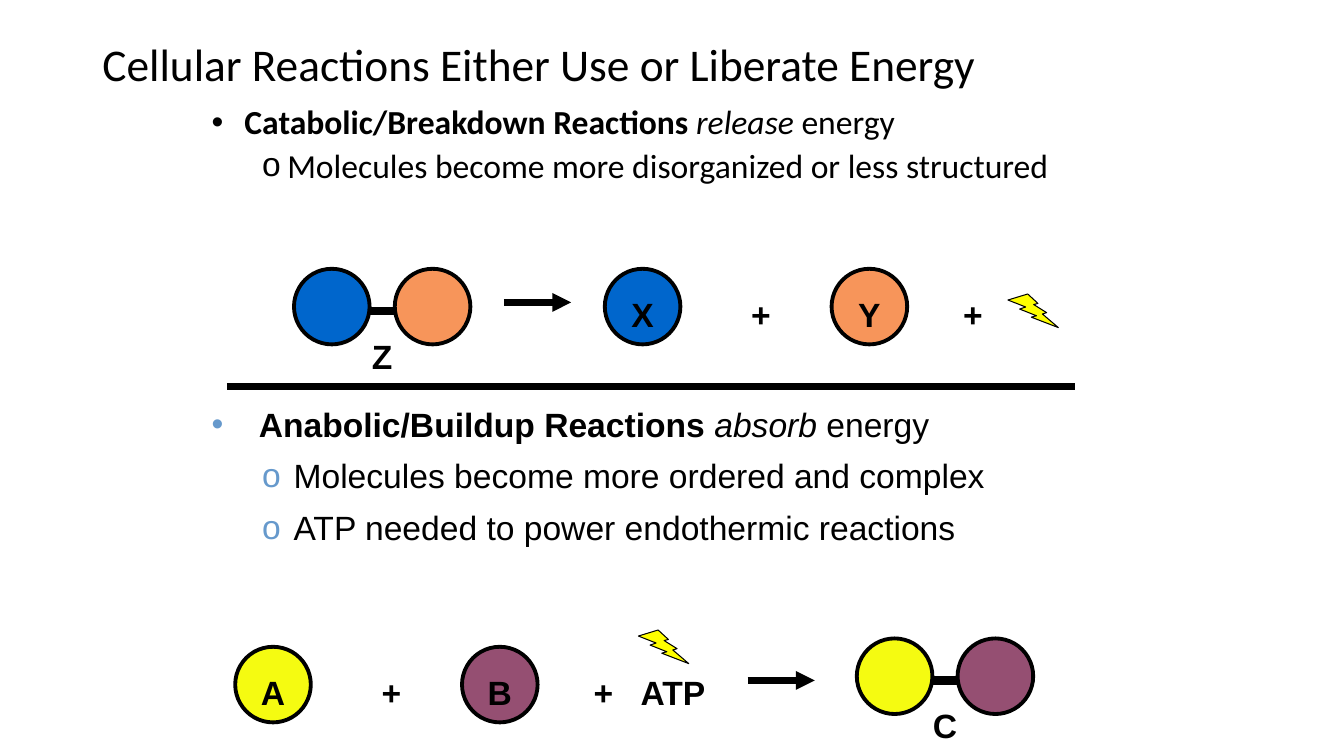
from dataclasses import dataclass
from typing import Optional

from lxml.etree import SubElement
from pptx import Presentation
from pptx.dml.color import RGBColor
from pptx.enum.shapes import MSO_CONNECTOR, MSO_SHAPE
from pptx.enum.text import MSO_ANCHOR, MSO_AUTO_SIZE, PP_ALIGN
from pptx.oxml.ns import qn
from pptx.util import Pt

BLACK = RGBColor(0x00, 0x00, 0x00)
BLUE = RGBColor(0x00, 0x66, 0xCC)
ORANGE = RGBColor(0xF7, 0x95, 0x5A)
LEMON = RGBColor(0xF5, 0xFB, 0x11)
PLUM = RGBColor(0x95, 0x4F, 0x72)
YELLOW = RGBColor(0xFF, 0xFF, 0x00)
BULLET_BLUE = RGBColor(0x66, 0x99, 0xCC)

BALL = 54
BOND = 18
TEXT_SIZE = 24


@dataclass
class Run:
    text: str
    bold: bool = False
    italic: bool = False


@dataclass
class Item:
    runs: list[Run]
    level: int
    margin: float
    hanging: float
    before: float


@dataclass
class BulletList:
    items: list[Item]
    top: float
    height: float
    font: str
    bullet_color: RGBColor


@dataclass
class Ball:
    left: float
    top: float
    color: RGBColor
    label: str = ""


@dataclass
class Molecule:
    left: float
    top: float
    colors: tuple[RGBColor, RGBColor]
    label: str


@dataclass
class Label:
    text: str
    x: float
    y: float


@dataclass
class Line:
    x1: float
    x2: float
    y: float
    width: float = 4.5
    arrow: bool = False


LISTS = [
    BulletList([
        Item([Run("Catabolic/Breakdown Reactions ", bold=True),
              Run("release", italic=True), Run(" energy")], 0, 23.4, 23.4, 10),
        Item([Run("Molecules become more disorganized or less structured")],
             1, 54, 18, 5),
    ], 72, 96, "Calibri", BLACK),
    BulletList([
        Item([Run("Anabolic/Buildup Reactions ", bold=True),
              Run("absorb ", italic=True), Run("energy")], 0, 33.7, 33.7, 11),
        Item([Run("Molecules become more ordered and complex")],
             1, 58.5, 22.5, 11),
        Item([Run("ATP needed to power endothermic reactions")],
             1, 58.5, 22.5, 11),
    ], 288, 109, "Arial", BULLET_BLUE),
]
MOLECULES = [
    Molecule(210, 192, (BLUE, ORANGE), "Z"),
    Molecule(612, 456, (LEMON, PLUM), "C"),
]
BALLS = [
    Ball(432, 192, BLUE, "X"),
    Ball(594, 192, ORANGE, "Y"),
    Ball(168, 462, LEMON, "A"),
    Ball(330, 462, PLUM, "B"),
]
LABELS = [
    Label("+", 543.5, 224.3),
    Label("+", 695, 224.3),
    Label("+", 279.5, 494.3),
    Label("+", 431, 494.3),
    Label("ATP", 480.7, 494.3),
]
LINES = [
    Line(360, 408, 216, arrow=True),
    Line(534, 582, 486, arrow=True),
    Line(162, 768, 276),
]
BOLTS = [(720, 210), (456, 450)]


def add_run(p, run: Run, font: str, size: float = TEXT_SIZE) -> None:
    r = p.add_run()
    r.text = run.text
    r.font.name = font
    r.font.size = Pt(size)
    r.font.bold = run.bold
    r.font.italic = run.italic
    r.font.color.rgb = BLACK


def place(sp, left: float, top: float, width: float, height: float) -> None:
    sp.left, sp.top = Pt(left), Pt(top)
    sp.width, sp.height = Pt(width), Pt(height)


def fill_list(sp, data: BulletList) -> None:
    place(sp, 144, data.top, 678, data.height)
    tf = sp.text_frame
    tf.auto_size = MSO_AUTO_SIZE.NONE
    for i, item in enumerate(data.items):
        p = tf.add_paragraph() if i else tf.paragraphs[0]
        p.level = item.level
        p.line_spacing = 0.9
        p.space_before = Pt(item.before)
        pPr = p._p.get_or_add_pPr()
        pPr.set("marL", str(Pt(item.margin)))
        pPr.set("indent", str(-Pt(item.hanging)))
        color = SubElement(pPr, qn("a:buClr"))
        SubElement(color, qn("a:srgbClr"), val=str(data.bullet_color))
        SubElement(pPr, qn("a:buFont"), typeface="Arial")
        SubElement(pPr, qn("a:buChar"), char="o" if item.level else "•")
        for run in item.runs:
            add_run(p, run, data.font)


def add_preset(s, kind: MSO_SHAPE, box: tuple[float, float, float, float],
               color: RGBColor, line: float):
    sp = s.shapes.add_shape(kind, *(Pt(v) for v in box))
    sp.shadow.inherit = False
    sp.fill.solid()
    sp.fill.fore_color.rgb = color
    sp.line.color.rgb = BLACK
    sp.line.width = Pt(line)
    return sp


def write_centred(sp, text: str, top_inset: float = 0) -> None:
    tf = sp.text_frame
    tf.word_wrap = True
    tf.margin_left = tf.margin_right = tf.margin_bottom = 0
    tf.margin_top = Pt(top_inset)
    tf.vertical_anchor = MSO_ANCHOR.MIDDLE
    p = tf.paragraphs[0]
    p.alignment = PP_ALIGN.CENTER
    add_run(p, Run(text, bold=True), "Arial")


def add_ball(s, ball: Ball) -> None:
    sp = add_preset(s, MSO_SHAPE.OVAL, (ball.left, ball.top, BALL, BALL),
                    ball.color, 2.75)
    if ball.label:
        write_centred(sp, ball.label, top_inset=10)


def add_label(s, label: Label) -> None:
    width, height = 60, 36
    sp = s.shapes.add_textbox(Pt(label.x - width / 2), Pt(label.y - height / 2),
                              Pt(width), Pt(height))
    write_centred(sp, label.text)


def add_line(s, line: Line) -> None:
    c = s.shapes.add_connector(MSO_CONNECTOR.STRAIGHT, Pt(line.x1), Pt(line.y),
                               Pt(line.x2), Pt(line.y))
    c.line.color.rgb = BLACK
    c.line.width = Pt(line.width)
    if line.arrow:
        SubElement(c.line._get_or_add_ln(), qn("a:tailEnd"), type="triangle")
    SubElement(c._element.spPr, qn("a:effectLst"))


def add_molecule(s, m: Molecule) -> None:
    for i, color in enumerate(m.colors):
        add_ball(s, Ball(m.left + i * (BALL + BOND), m.top, color))
    start = m.left + BALL
    add_line(s, Line(start, start + BOND, m.top + 30, width=6))
    add_label(s, Label(m.label, start + BOND / 2, m.top + 62))


def main() -> None:
    prs = Presentation()
    prs.slide_width, prs.slide_height = Pt(960), Pt(540)
    s = prs.slides.add_slide(prs.slide_layouts[3])
    title, *bodies = s.placeholders
    place(title, 66, 29, 828, 37)
    tf = title.text_frame
    tf.auto_size = MSO_AUTO_SIZE.NONE
    tf.vertical_anchor = MSO_ANCHOR.MIDDLE
    p = tf.paragraphs[0]
    p.alignment = PP_ALIGN.LEFT
    p.line_spacing = 0.9
    add_run(p, Run("Cellular Reactions Either Use or Liberate Energy"),
            "Calibri", 32.4)
    for sp, data in zip(bodies, LISTS):
        fill_list(sp, data)
    for molecule in MOLECULES:
        add_molecule(s, molecule)
    for ball in BALLS:
        add_ball(s, ball)
    for label in LABELS:
        add_label(s, label)
    for line in LINES:
        add_line(s, line)
    for left, top in BOLTS:
        add_preset(s, MSO_SHAPE.LIGHTNING_BOLT, (left, top, 36, 24), YELLOW, 0.75)
    prs.save("out.pptx")


if __name__ == "__main__":
    main()
